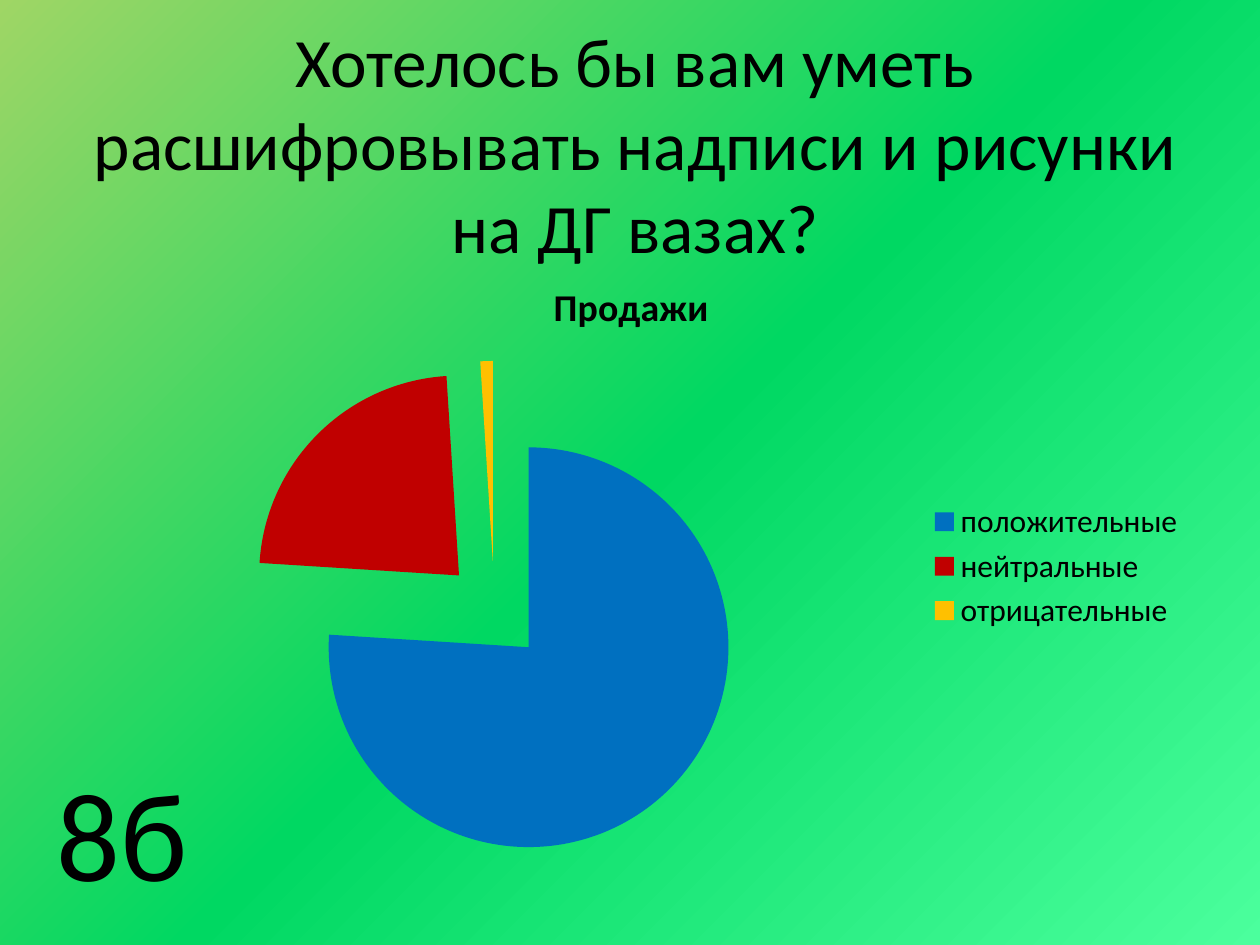
from copy import deepcopy

from lxml import etree
from pptx import Presentation
from pptx.chart.data import CategoryChartData
from pptx.dml.color import RGBColor
from pptx.enum.chart import XL_CHART_TYPE, XL_LEGEND_POSITION
from pptx.enum.text import MSO_ANCHOR, PP_ALIGN
from pptx.oxml.ns import qn
from pptx.util import Pt

PIE = XL_CHART_TYPE.PIE
LEGEND_RIGHT = XL_LEGEND_POSITION.RIGHT
MIDDLE, TOP = MSO_ANCHOR.MIDDLE, MSO_ANCHOR.TOP
CENTER, LEFT = PP_ALIGN.CENTER, PP_ALIGN.LEFT

FONT = "Calibri"
TITLE_SIZE, CHART_TITLE_SIZE, CHART_SIZE, CLASS_SIZE = 39.6, 21.6, 18, 72
COLORS = {
    "text": "000000",
    "bg_start": "9FD665",
    "bg_middle": "00D862",
    "bg_end": "4BFF9D",
    "positive": "0070C0",
    "neutral": "C00000",
    "negative": "FFC000",
}
GRADIENT_STOPS = [("bg_start", 0), ("bg_middle", 0.51), ("bg_end", 1)]
GRADIENT_ANGLE = 315

QUESTION = "Хотелось бы вам уметь расшифровывать надписи и рисунки на ДГ вазах?"
CLASS_NAME = "8б"
SERIES_NAME = "Продажи"
ANSWERS = [
    ("положительные", 76, "positive"),
    ("нейтральные", 23, "neutral"),
    ("отрицательные", 1, "negative"),
]
EXPLOSION = 25

SLIDE_W, SLIDE_H = 720, 540
MARGIN = 25.2
TITLE_BOX = (MARGIN, 0, 675.4, 163.4)
CHART_BOX = (36.7, 145.4, 648, 356.4)
CLASS_BOX = (MARGIN, 428.4, 90, 94.3)


def rgb(name):
    """Return the named colour."""
    return RGBColor.from_string(COLORS[name])


def style_font(font, size, bold=False):
    """Apply the common typeface and text colour."""
    font.name, font.size, font.bold = FONT, Pt(size), bold
    font.color.rgb = rgb("text")


def add_background(slide):
    """Fill the slide with a diagonal three-colour gradient."""
    fill = slide.background.fill
    fill.gradient()
    fill.gradient_angle = GRADIENT_ANGLE
    first_stop = slide.element.find(".//" + qn("a:gs"))
    first_stop.addnext(deepcopy(first_stop))
    for stop, (name, position) in zip(fill.gradient_stops, GRADIENT_STOPS):
        stop.color.rgb = rgb(name)
        stop.position = position


def add_text(slide, box, text, size, align=LEFT, anchor=TOP, wrap=True):
    """Place one paragraph of text in the box."""
    tf = slide.shapes.add_textbox(*map(Pt, box)).text_frame
    tf.word_wrap, tf.vertical_anchor = wrap, anchor
    tf.text = text
    p = tf.paragraphs[0]
    p.alignment = align
    style_font(p.runs[0].font, size)


def style_chart_title(chart):
    """Show the series name in bold above the pie."""
    chart.has_title = True
    title = chart.chart_title
    title.include_in_layout = False
    tf = title.text_frame
    tf.text = SERIES_NAME
    style_font(tf.paragraphs[0].runs[0].font, CHART_TITLE_SIZE, bold=True)


def style_legend(chart):
    """Show the legend to the right of the pie."""
    chart.has_legend = True
    legend = chart.legend
    legend.position = LEGEND_RIGHT
    legend.include_in_layout = False
    style_font(legend.font, CHART_SIZE)


def style_slices(chart):
    """Colour each slice and pull all slices apart."""
    plot = chart.plots[0]
    plot.vary_by_categories = True
    points = plot.series[0].points
    for i, (_, _, color) in enumerate(ANSWERS):
        fill = points[i].format.fill
        fill.solid()
        fill.fore_color.rgb = rgb(color)
    explosion = etree.Element(qn("c:explosion"), val=str(EXPLOSION))
    chart.element.find(".//" + qn("c:dPt")).addprevious(explosion)


def add_answer_chart(slide, box):
    """Place the exploded pie of answers in the box."""
    data = CategoryChartData()
    data.categories = [label for label, _, _ in ANSWERS]
    data.add_series(SERIES_NAME, [value for _, value, _ in ANSWERS])
    chart = slide.shapes.add_chart(PIE, *map(Pt, box), data).chart
    style_font(chart.font, CHART_SIZE)
    style_chart_title(chart)
    style_legend(chart)
    style_slices(chart)


def main():
    """Build and save the slide."""
    prs = Presentation()
    prs.slide_width, prs.slide_height = Pt(SLIDE_W), Pt(SLIDE_H)
    slide = prs.slides.add_slide(prs.slide_layouts[6])
    add_background(slide)
    add_text(slide, TITLE_BOX, QUESTION, TITLE_SIZE, CENTER, MIDDLE)
    add_answer_chart(slide, CHART_BOX)
    add_text(slide, CLASS_BOX, CLASS_NAME, CLASS_SIZE, wrap=False)
    prs.save("out.pptx")


if __name__ == "__main__":
    main()
